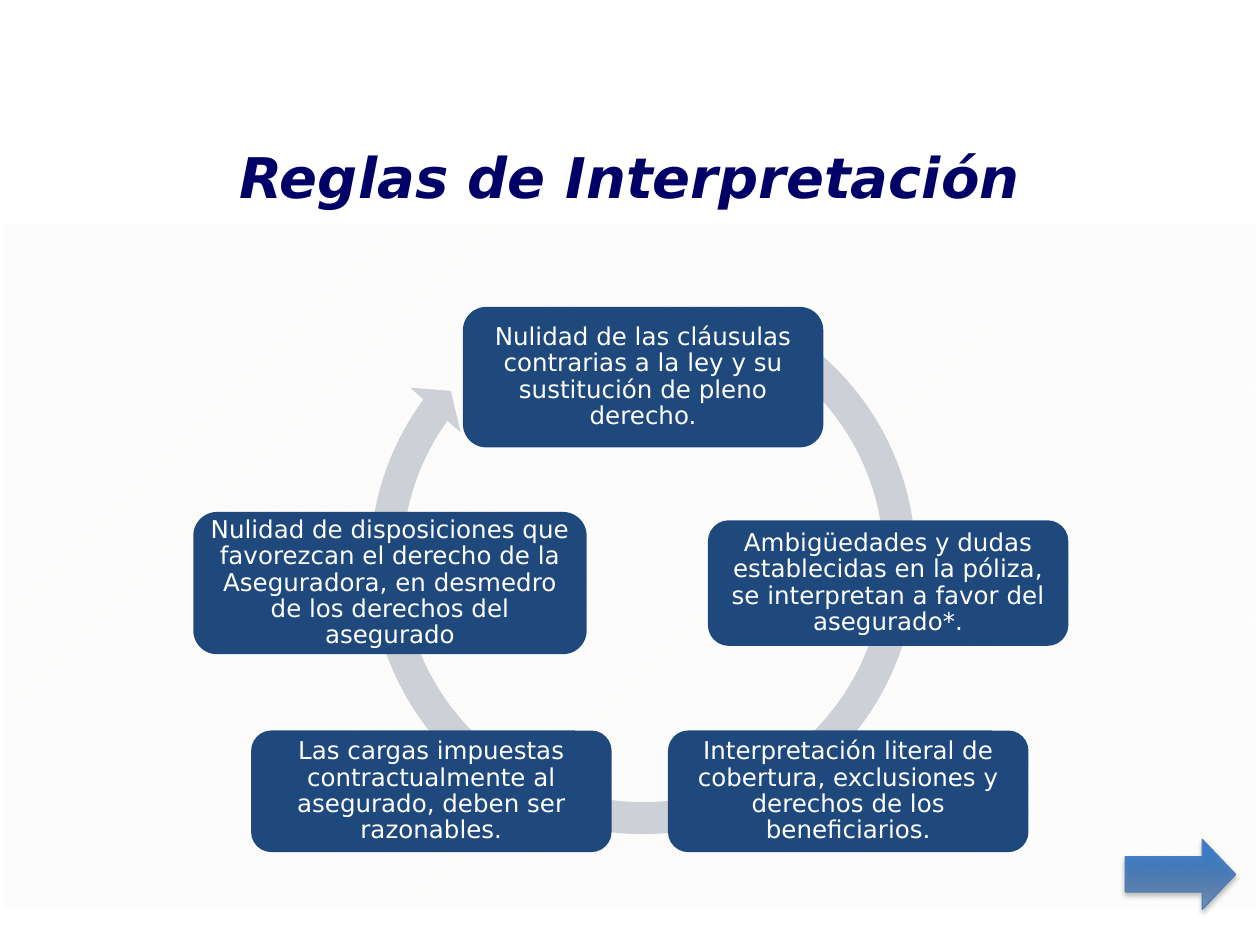
import dataclasses

import pptx
import pptx.dml.color
import pptx.enum.dml
import pptx.enum.shapes
import pptx.enum.text
import pptx.oxml
import pptx.oxml.ns
import pptx.util

Pt = pptx.util.Pt
SHAPE = pptx.enum.shapes.MSO_SHAPE
CENTER = pptx.enum.text.PP_ALIGN.CENTER
MIDDLE = pptx.enum.text.MSO_ANCHOR.MIDDLE


@dataclasses.dataclass(frozen=True)
class Theme:
    font: str = "DejaVu Sans"
    title_size: float = 32
    card_size: float = 14
    title: str = "000066"
    card: str = "1F497D"
    card_text: str = "FFFFFF"
    ring: str = "CDD0D7"
    hatch: str = "EEECE1"
    paper: str = "FFFFFF"
    arrow_line: str = "4B7EBC"
    arrow_dark: str = "2F5F99"
    arrow_mid: str = "3D7CC7"
    arrow_light: str = "3A7CCB"
    shadow: str = "000000"


THEME = Theme()

# Text, centre offset from the ring's centre, width and height
RULES = [
    ("Nulidad de las cláusulas contrarias a la ley y su sustitución de pleno derecho.",
     0, -105.3, 206, 80.3),
    ("Ambigüedades y dudas establecidas en la póliza, se interpretan a favor del asegurado*.",
     140, 12.4, 206, 71.8),
    ("Interpretación literal de cobertura, exclusiones y derechos de los beneficiarios.",
     117.2, 131.4, 206, 69.5),
    ("Las cargas impuestas contractualmente al asegurado, deben ser razonables.",
     -121, 131.4, 206, 69.5),
    ("Nulidad de disposiciones que favorezcan el derecho de la Aseguradora, "
     "en desmedro de los derechos del asegurado",
     -144.6, 12.4, 224.8, 81.3),
]


def rgb(value):
    return pptx.dml.color.RGBColor.from_string(value)


def add_plain_shape(slide, kind, box, color=None):
    shape = slide.shapes.add_shape(kind, *(Pt(length) for length in box))
    shape.shadow.inherit = False
    shape.line.fill.background()
    if color:
        shape.fill.solid()
        shape.fill.fore_color.rgb = rgb(color)
    return shape


def write_centred(frame, text, size, color, bold=False, italic=False):
    frame.text = text
    frame.word_wrap = True
    frame.vertical_anchor = MIDDLE
    paragraph = frame.paragraphs[0]
    paragraph.alignment = CENTER
    font = paragraph.runs[0].font
    font.name, font.size = THEME.font, Pt(size)
    font.bold, font.italic = bold, italic
    font.color.rgb = rgb(color)
    return paragraph


def place_backdrop(slide, box):
    backdrop = add_plain_shape(slide, SHAPE.RECTANGLE, box)
    backdrop.fill.patterned()
    backdrop.fill.pattern = pptx.enum.dml.MSO_PATTERN.DARK_UPWARD_DIAGONAL
    backdrop.fill.fore_color.rgb = rgb(THEME.hatch)
    backdrop.fill.back_color.rgb = rgb(THEME.paper)
    # Send behind the title
    slide.shapes._spTree.insert(2, backdrop._element)


def place_title(slide, box, text):
    title = slide.shapes.title
    title.left, title.top, title.width, title.height = (Pt(length) for length in box)
    write_centred(title.text_frame, text, THEME.title_size, THEME.title, True, True)


def place_cycle(slide, box, rules):
    left, top, width, height = box
    ring = add_plain_shape(slide, SHAPE.CIRCULAR_ARROW, box, THEME.ring)
    for index, value in enumerate((0.055, 3.307, 129.644, 179.022, 0.058)):
        ring.adjustments[index] = value

    # Rule cards around the ring
    center_x, center_y = left + width / 2, top + height / 2
    for text, dx, dy, card_width, card_height in rules:
        card_box = (center_x + dx - card_width / 2, center_y + dy - card_height / 2,
                    card_width, card_height)
        card = add_plain_shape(slide, SHAPE.ROUNDED_RECTANGLE, card_box, THEME.card)
        frame = card.text_frame
        frame.margin_left = frame.margin_right = Pt(4.2)
        frame.margin_top = frame.margin_bottom = Pt(4.2)
        paragraph = write_centred(frame, text, THEME.card_size, THEME.card_text)
        paragraph.line_spacing = 0.9


def place_next_arrow(slide, box):
    arrow = add_plain_shape(slide, SHAPE.RIGHT_ARROW, box, THEME.arrow_mid)
    arrow.adjustments[0], arrow.adjustments[1] = 0.5, 0.476
    arrow.line.color.rgb = rgb(THEME.arrow_line)
    arrow.line.width = Pt(0.75)

    # Gradient from bottom to top, translucent at the bottom
    namespace = pptx.oxml.ns.nsdecls("a")
    gradient = pptx.oxml.parse_xml(
        f'<a:gradFill {namespace} rotWithShape="1"><a:gsLst>'
        f'<a:gs pos="0"><a:srgbClr val="{THEME.arrow_dark}"><a:alpha val="54000"/></a:srgbClr></a:gs>'
        f'<a:gs pos="80000"><a:srgbClr val="{THEME.arrow_mid}"/></a:gs>'
        f'<a:gs pos="100000"><a:srgbClr val="{THEME.arrow_light}"/></a:gs>'
        '</a:gsLst><a:lin ang="16200000" scaled="0"/></a:gradFill>')
    properties = arrow._element.spPr
    solid = properties.find(pptx.oxml.ns.qn("a:solidFill"))
    properties.replace(solid, gradient)

    # Soft shadow below
    effects = properties.find(pptx.oxml.ns.qn("a:effectLst"))
    effects.append(pptx.oxml.parse_xml(
        f'<a:outerShdw {namespace} blurRad="{Pt(3.1)}" dist="{Pt(1.8)}" dir="5400000" '
        f'rotWithShape="0"><a:srgbClr val="{THEME.shadow}"><a:alpha val="35000"/>'
        '</a:srgbClr></a:outerShdw>'))


def main():
    deck = pptx.Presentation()
    deck.slide_width, deck.slide_height = Pt(720), Pt(540)
    slide = deck.slides.add_slide(deck.slide_layouts[5])
    place_backdrop(slide, (2.4, 128, 715, 391))
    place_title(slide, (36, 55.5, 648, 90), "Reglas de Interpretación")
    place_cycle(slide, (201.5, 154.8, 332, 332), RULES)
    place_next_arrow(slide, (643, 479.6, 63, 40))
    deck.save("out.pptx")


if __name__ == "__main__":
    main()
